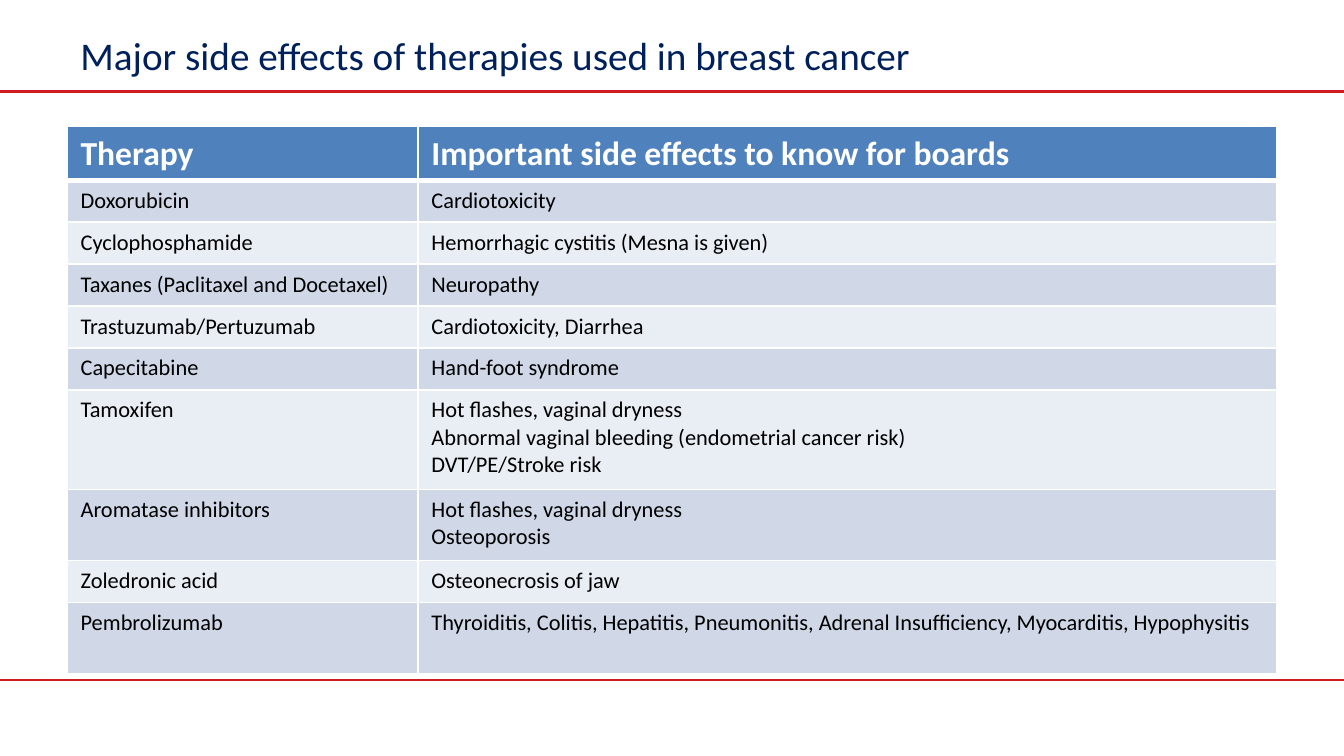
from dataclasses import dataclass

from lxml.etree import SubElement
from pptx import Presentation
from pptx.dml.color import RGBColor
from pptx.enum.shapes import MSO_CONNECTOR
from pptx.enum.text import MSO_ANCHOR
from pptx.oxml import parse_xml
from pptx.oxml.ns import nsdecls, qn
from pptx.util import Inches, Pt


@dataclass(frozen=True)
class Theme:
    font: str = "Calibri"
    title: str = "00205B"
    rule: str = "CF1C20"
    header: str = "4F81BD"
    bands: tuple = ("D0D8E8", "E9EDF4")
    white: str = "FFFFFF"
    body: str = "000000"
    title_size: float = 21
    header_size: float = 18
    body_size: float = 12


THEME = Theme()
WIDTH = 10
HEIGHT = WIDTH * 9 / 16
HEADER_HEIGHT = 0.33
LINE_HEIGHT = 5 / 16
COLUMN_WIDTHS = (2.61, 6.39)

TITLE = "Major side effects of therapies used in breast cancer"
HEADER = ("Therapy", "Important side effects to know for boards")
# Therapy, side effects (one line each), row height
THERAPIES = [
    ("Doxorubicin", "Cardiotoxicity", LINE_HEIGHT),
    ("Cyclophosphamide", "Hemorrhagic cystitis (Mesna is given)", LINE_HEIGHT),
    ("Taxanes (Paclitaxel and Docetaxel)", "Neuropathy", LINE_HEIGHT),
    ("Trastuzumab/Pertuzumab", "Cardiotoxicity, Diarrhea", LINE_HEIGHT),
    ("Capecitabine", "Hand-foot syndrome", LINE_HEIGHT),
    ("Tamoxifen",
     "Hot flashes, vaginal dryness\n"
     "Abnormal vaginal bleeding (endometrial cancer risk)\n"
     "DVT/PE/Stroke risk", 0.74),
    ("Aromatase inhibitors", "Hot flashes, vaginal dryness\nOsteoporosis", 0.53),
    ("Zoledronic acid", "Osteonecrosis of jaw", LINE_HEIGHT),
    ("Pembrolizumab",
     "Thyroiditis, Colitis, Hepatitis, Pneumonitis, Adrenal Insufficiency, "
     "Myocarditis, Hypophysitis", 0.53),
]


def write_text(tf, text, size, color, bold=False):
    tf.text = text
    formats = {"name": THEME.font, "size": Pt(size), "bold": bold}
    for p in tf.paragraphs:
        for r in p.runs:
            for name, value in formats.items():
                setattr(r.font, name, value)
            r.font.color.rgb = RGBColor.from_string(color)


def add_rule(s, y, weight):
    line = s.shapes.add_connector(
        MSO_CONNECTOR.STRAIGHT, Inches(0), Inches(y), Inches(WIDTH), Inches(y))
    line.line.color.rgb = RGBColor.from_string(THEME.rule)
    line.line.width = Pt(weight)
    SubElement(line._element.spPr, qn("a:effectLst"))


def add_title(s, text):
    sp = s.shapes.add_textbox(Inches(0.5), Inches(0.23), Inches(9), Inches(0.35))
    tf = sp.text_frame
    tf.word_wrap = True
    tf.vertical_anchor = MSO_ANCHOR.MIDDLE
    write_text(tf, text, THEME.title_size, THEME.title)


def set_borders(cell, top=1, bottom=1):
    weights = {"lnL": 1, "lnR": 1, "lnT": top, "lnB": bottom}
    tc_pr = cell._tc.get_or_add_tcPr()
    # Borders come before the fill, in this order
    for i, (side, weight) in enumerate(weights.items()):
        tc_pr.insert(i, parse_xml(
            f'<a:{side} {nsdecls("a")} w="{Pt(weight)}"><a:solidFill>'
            f'<a:srgbClr val="{THEME.white}"/></a:solidFill></a:{side}>'))


def fill_row(table, row, texts, fill, size, color, bold=False, **borders):
    for col, text in enumerate(texts):
        cell = table.cell(row, col)
        cell.fill.solid()
        cell.fill.fore_color.rgb = RGBColor.from_string(fill)
        write_text(cell.text_frame, text, size, color, bold)
        set_borders(cell, **borders)


def add_therapy_table(s):
    heights = [HEADER_HEIGHT] + [height for _, _, height in THERAPIES]
    table = s.shapes.add_table(
        len(heights), len(COLUMN_WIDTHS), Inches(0.5), Inches(0.94),
        Inches(sum(COLUMN_WIDTHS)), Inches(sum(heights))).table
    for column, width in zip(table.columns, COLUMN_WIDTHS):
        column.width = Inches(width)
    for row, height in zip(table.rows, heights):
        row.height = Inches(height)

    fill_row(table, 0, HEADER, THEME.header, THEME.header_size, THEME.white,
             bold=True, bottom=3)
    for i, (therapy, effects, _) in enumerate(THERAPIES):
        fill_row(table, i + 1, (therapy, effects), THEME.bands[i % 2],
                 THEME.body_size, THEME.body, top=3 if i == 0 else 1)


def main():
    prs = Presentation()
    prs.slide_width, prs.slide_height = Inches(WIDTH), Inches(HEIGHT)
    s = prs.slides.add_slide(prs.slide_layouts[6])

    # Footer and title rules
    add_rule(s, 5.06, 1)
    add_rule(s, 0.68, 1.25)

    # Title and table
    add_title(s, TITLE)
    add_therapy_table(s)

    prs.save("out.pptx")


if __name__ == "__main__":
    main()
